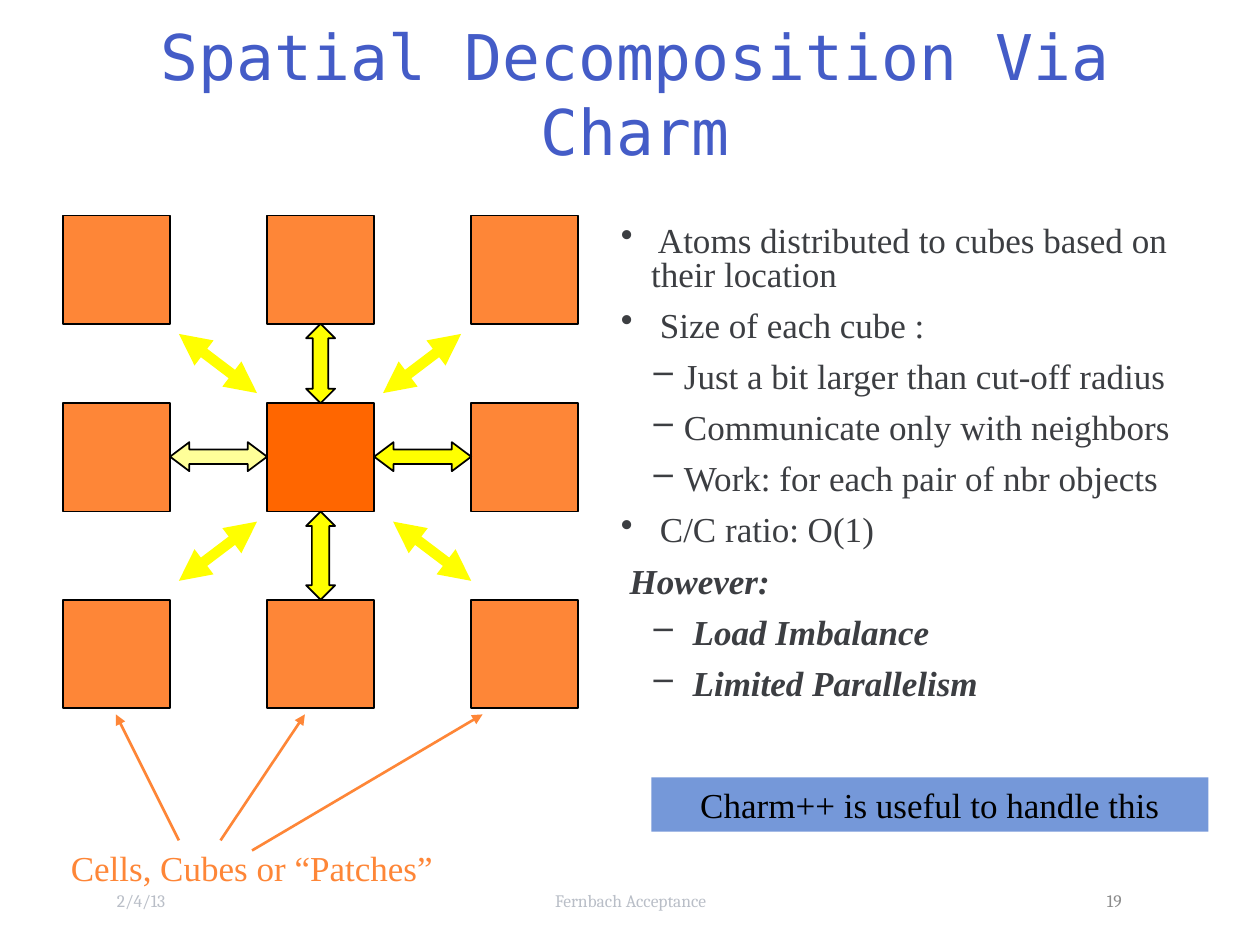
from dataclasses import dataclass

from lxml import etree
from pptx import Presentation
from pptx.dml.color import RGBColor
from pptx.enum.shapes import MSO_CONNECTOR, MSO_SHAPE
from pptx.enum.text import MSO_ANCHOR, PP_ALIGN
from pptx.oxml.ns import qn
from pptx.util import Inches, Pt

LEFT, CENTER, RIGHT = PP_ALIGN.LEFT, PP_ALIGN.CENTER, PP_ALIGN.RIGHT
TOP, MIDDLE = MSO_ANCHOR.TOP, MSO_ANCHOR.MIDDLE
RECTANGLE = MSO_SHAPE.RECTANGLE
HORIZONTAL, VERTICAL = MSO_SHAPE.LEFT_RIGHT_ARROW, MSO_SHAPE.UP_DOWN_ARROW
STRAIGHT = MSO_CONNECTOR.STRAIGHT


@dataclass(frozen=True)
class Theme:
    title_font: str = "DejaVu Sans Mono"
    body_font: str = "Times New Roman"
    footer_font: str = "Cambria"
    title_size: int = 36
    body_size: int = 20
    footer_size: int = 10
    title: str = "445CC7"
    body: str = "3C3E42"
    footer: str = "B9BEC7"
    number: str = "8C8C8C"
    black: str = "000000"
    cell: str = "FE8637"
    center_cell: str = "FF6600"
    yellow: str = "FFFF00"
    pale_yellow: str = "FFFF99"
    banner: str = "7598D9"


THEME = Theme()

# Grid of cells
COLUMNS = [0.5, 2.12, 3.74]
ROWS = [1.71, 3.2, 4.76]
CELL_WIDTH, CELL_HEIGHT = 0.85, 0.86
ARROW_THICKNESS = 0.23

# Text, outline level, bullet, emphasis
POINTS = [
    (" Atoms distributed to cubes based on their location", 0, "•", False),
    (" Size of each cube :", 0, "•", False),
    ("Just a bit larger than cut-off radius", 1, "–", False),
    ("Communicate only with neighbors", 1, "–", False),
    ("Work: for each pair of nbr objects", 1, "–", False),
    (" C/C ratio: O(1)", 0, "•", False),
    (" However:", 0, None, True),
    (" Load Imbalance", 1, "–", True),
    (" Limited Parallelism", 1, "–", True),
]


def style_font(para, font_name, size, color):
    para.font.name = font_name
    para.font.size = Pt(size)
    para.font.color.rgb = RGBColor.from_string(color)


def write_line(shape, text, font_name, size, color, align, anchor=TOP):
    frame = shape.text_frame
    frame.word_wrap = True
    frame.vertical_anchor = anchor
    para = frame.paragraphs[0]
    para.text = text
    para.alignment = align
    style_font(para, font_name, size, color)


def add_label(page, bounds, *text_style):
    box = page.shapes.add_textbox(*map(Inches, bounds))
    write_line(box, *text_style)


def add_block(page, kind, bounds, fill, outlined=True):
    block = page.shapes.add_shape(kind, *map(Inches, bounds))
    block.shadow.inherit = False
    block.fill.solid()
    block.fill.fore_color.rgb = RGBColor.from_string(fill)
    if outlined:
        block.line.color.rgb = RGBColor.from_string(THEME.black)
        block.line.width = Pt(1)
    else:
        block.line.fill.background()
    return block


def add_arrow(page, start, end, color, width, ends=("tailEnd",)):
    arrow = page.shapes.add_connector(STRAIGHT, *map(Inches, (*start, *end)))
    arrow.line.color.rgb = RGBColor.from_string(color)
    arrow.line.width = Pt(width)
    line = arrow.line._get_or_add_ln()
    for tag in ends:
        etree.SubElement(line, qn(f"a:{tag}"), type="triangle")
    etree.SubElement(arrow._element.spPr, qn("a:effectLst"))


def add_double_arrow(page, kind, bounds, fill, head):
    arrow = add_block(page, kind, bounds, fill)
    arrow.adjustments[0] = 0.5
    arrow.adjustments[1] = head


def add_cells(page):
    for row, top in enumerate(ROWS):
        for column, left in enumerate(COLUMNS):
            fill = THEME.center_cell if row == column == 1 else THEME.cell
            add_block(page, RECTANGLE, (left, top, CELL_WIDTH, CELL_HEIGHT), fill)


def add_neighbor_arrows(page):
    # Block arrows fill the gaps beside, above and below the center cell
    for left, fill in zip(COLUMNS, (THEME.pale_yellow, THEME.yellow)):
        start = left + CELL_WIDTH
        gap = COLUMNS[1] - COLUMNS[0] - CELL_WIDTH
        bounds = (start, 3.51, gap, ARROW_THICKNESS)
        add_double_arrow(page, HORIZONTAL, bounds, fill, 0.667)
    for top, next_top, head in zip(ROWS, ROWS[1:], (0.533, 0.6)):
        start = top + CELL_HEIGHT
        bounds = (2.43, start, ARROW_THICKNESS, next_top - start)
        add_double_arrow(page, VERTICAL, bounds, THEME.yellow, head)

    # Diagonal arrows to the corner cells
    diagonals = [
        ((1.42, 2.65), (2.04, 3.12)),
        ((3.12, 4.14), (3.74, 4.61)),
        ((3.66, 2.65), (3.04, 3.12)),
        ((2.04, 4.14), (1.42, 4.61)),
    ]
    for start, end in diagonals:
        add_arrow(page, start, end, THEME.yellow, 6, ("headEnd", "tailEnd"))


def add_points(page):
    box = page.shapes.add_textbox(*map(Inches, (4.83, 1.75, 5, 4.58)))
    frame = box.text_frame
    frame.word_wrap = True
    for index, (text, level, bullet, emphasis) in enumerate(POINTS):
        para = frame.paragraphs[0] if index == 0 else frame.add_paragraph()
        para.text = text
        para.level = level
        para.line_spacing = 0.8
        para.space_before = Pt(THEME.body_size / 2 if index else 0)
        properties = para._p.get_or_add_pPr()
        properties.set("marL", str(Inches(0.5 if level else 0.24)))
        properties.set("indent", str(Inches(-0.24)))
        if bullet:
            etree.SubElement(properties, qn("a:buChar"), char=bullet)
        else:
            etree.SubElement(properties, qn("a:buNone"))
        style_font(para, THEME.body_font, THEME.body_size, THEME.body)
        para.font.bold = para.font.italic = emphasis


def add_patch_caption(page):
    add_label(page, (0.25, 6.67, 3.5, 0.43), "Cells, Cubes or “Patches”",
              THEME.body_font, THEME.body_size, THEME.cell, CENTER)
    pointers = [
        ((1.42, 6.67), (0.92, 5.67)),
        ((2, 6.75), (3.83, 5.67)),
        ((1.75, 6.67), (2.42, 5.67)),
    ]
    for start, end in pointers:
        add_arrow(page, start, end, THEME.cell, 1.5)


def add_footer(page):
    items = [
        (0.83, 2, "2/4/13", THEME.footer, LEFT),
        (3.42, 3.17, "Fernbach Acceptance", THEME.footer, CENTER),
        (7.17, 1.83, "19", THEME.number, RIGHT),
    ]
    for left, width, text, color, align in items:
        add_label(page, (left, 6.95, width, 0.4), text,
                  THEME.footer_font, THEME.footer_size, color, align, MIDDLE)


def main():
    deck = Presentation()
    deck.slide_width, deck.slide_height = Inches(10), Inches(7.5)
    page = deck.slides.add_slide(deck.slide_layouts[5])

    # Title
    title = page.shapes.title
    title.left, title.top = Inches(0.5), Inches(0.3)
    title.width, title.height = Inches(9.08), Inches(0.87)
    write_line(title, "Spatial Decomposition Via Charm", THEME.title_font,
               THEME.title_size, THEME.title, CENTER, MIDDLE)

    # Cell diagram
    add_cells(page)
    add_neighbor_arrows(page)

    # Explanation and captions
    add_points(page)
    add_patch_caption(page)
    banner = add_block(page, RECTANGLE, (5.17, 6.17, 4.42, 0.43),
                       THEME.banner, outlined=False)
    write_line(banner, "Charm++ is useful to handle this", THEME.body_font,
               THEME.body_size, THEME.black, CENTER)
    add_footer(page)

    deck.save("out.pptx")


if __name__ == "__main__":
    main()
